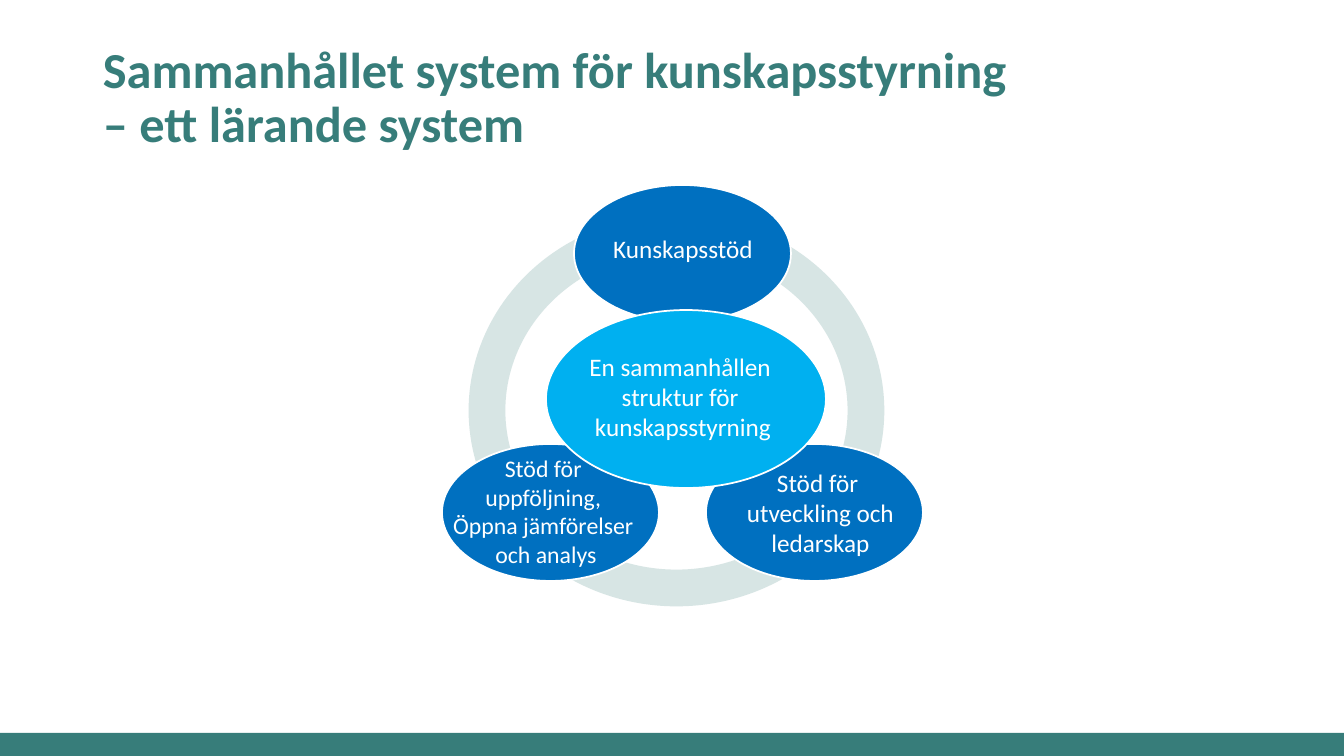
import pptx
import pptx.dml.color
import pptx.enum.shapes
import pptx.enum.text
import pptx.oxml.ns
import pptx.util
from lxml import etree

RGBColor = pptx.dml.color.RGBColor
TEAL = RGBColor(0x37, 0x7D, 0x7A)
BLUE = RGBColor(0x00, 0x70, 0xC0)
SKY = RGBColor(0x00, 0xB0, 0xF0)
WHITE = RGBColor(0xFF, 0xFF, 0xFF)

SHAPES = pptx.enum.shapes.MSO_SHAPE
ALIGN = pptx.enum.text.PP_ALIGN
FONT = "Calibri"
PX_PER_INCH = 100.8


def px(length):
    return round(length * 914400 / PX_PER_INCH)


def add_text(slide, box, lines, size, color, bold=False, align=ALIGN.LEFT, spacing=None):
    text_box = slide.shapes.add_textbox(*map(px, box))
    frame = text_box.text_frame
    frame.word_wrap = True
    for index, line in enumerate(lines):
        paragraph = frame.paragraphs[0] if index == 0 else frame.add_paragraph()
        paragraph.text = line
        paragraph.alignment = align
        if spacing:
            paragraph.line_spacing = spacing
        for run in paragraph.runs:
            formats = {"name": FONT, "size": pptx.util.Pt(size), "bold": bold}
            for name, value in formats.items():
                setattr(run.font, name, value)
            run.font.color.rgb = color


def add_filled(slide, kind, box, fill, line=None, line_width=1.25):
    shape = slide.shapes.add_shape(kind, *map(px, box))
    shape.shadow.inherit = False
    shape.fill.solid()
    shape.fill.fore_color.rgb = fill
    if line is None:
        shape.line.fill.background()
    else:
        shape.line.color.rgb = line
        shape.line.width = pptx.util.Pt(line_width)
    return shape


def add_footer_bar(slide, box):
    add_filled(slide, SHAPES.RECTANGLE, box, TEAL)


def add_title(slide, box):
    title = "Sammanhållet system för kunskapsstyrning\v– ett lärande system"
    add_text(slide, box, [title], 36, TEAL, bold=True, spacing=0.9)


def add_ring(slide, box):
    ring = add_filled(slide, SHAPES.FLOWCHART_CONNECTOR, box, WHITE, TEAL, 26.25)
    # Make the outline mostly transparent
    line_color = ring._element.spPr.find(
        pptx.oxml.ns.qn("a:ln")).find(".//" + pptx.oxml.ns.qn("a:srgbClr"))
    alpha = etree.SubElement(line_color, pptx.oxml.ns.qn("a:alpha"))
    alpha.set("val", "20000")


def add_diagram(slide, box):
    left, top, width, height = box
    add_ring(slide, (left + 52, top + 48, 379, 355))

    # Ellipses and labels, back to front, relative to the diagram
    node_size = (217, 137)
    middle, side, lower = 139, 132, 259
    nodes = [
        ((middle, 0, *node_size), BLUE, (162, 43, 172, 40), 18, ["Kunskapsstöd"]),
        ((middle + side, lower, *node_size), BLUE, (271, 277, 229, 102), 18,
         ["Stöd för ", "utveckling och ledarskap"]),
        ((middle - side, lower, *node_size), BLUE, (0, 264, 222, 126), 17,
         ["Stöd för ", "uppföljning, ", "Öppna jämförelser ", "och analys"]),
        ((111, 125, 280, 178), SKY, (136, 161, 224, 102), 18,
         ["En sammanhållen ", "struktur för ", "kunskapsstyrning"]),
    ]
    for ellipse, fill, label, size, lines in nodes:
        ellipse_box, label_box = (
            (left + x, top + y, w, h) for x, y, w, h in (ellipse, label))
        add_filled(slide, SHAPES.OVAL, ellipse_box, fill, WHITE)
        add_text(slide, label_box, lines, size, WHITE, align=ALIGN.CENTER)


def main():
    presentation = pptx.Presentation()
    presentation.slide_width = px(1344)
    presentation.slide_height = px(756)
    slide = presentation.slides.add_slide(presentation.slide_layouts[6])
    add_footer_bar(slide, (0, 733, 1344, 23))
    add_title(slide, (93, 40, 1159, 146))
    add_diagram(slide, (435, 185, 500, 420))
    presentation.save("out.pptx")


if __name__ == "__main__":
    main()
